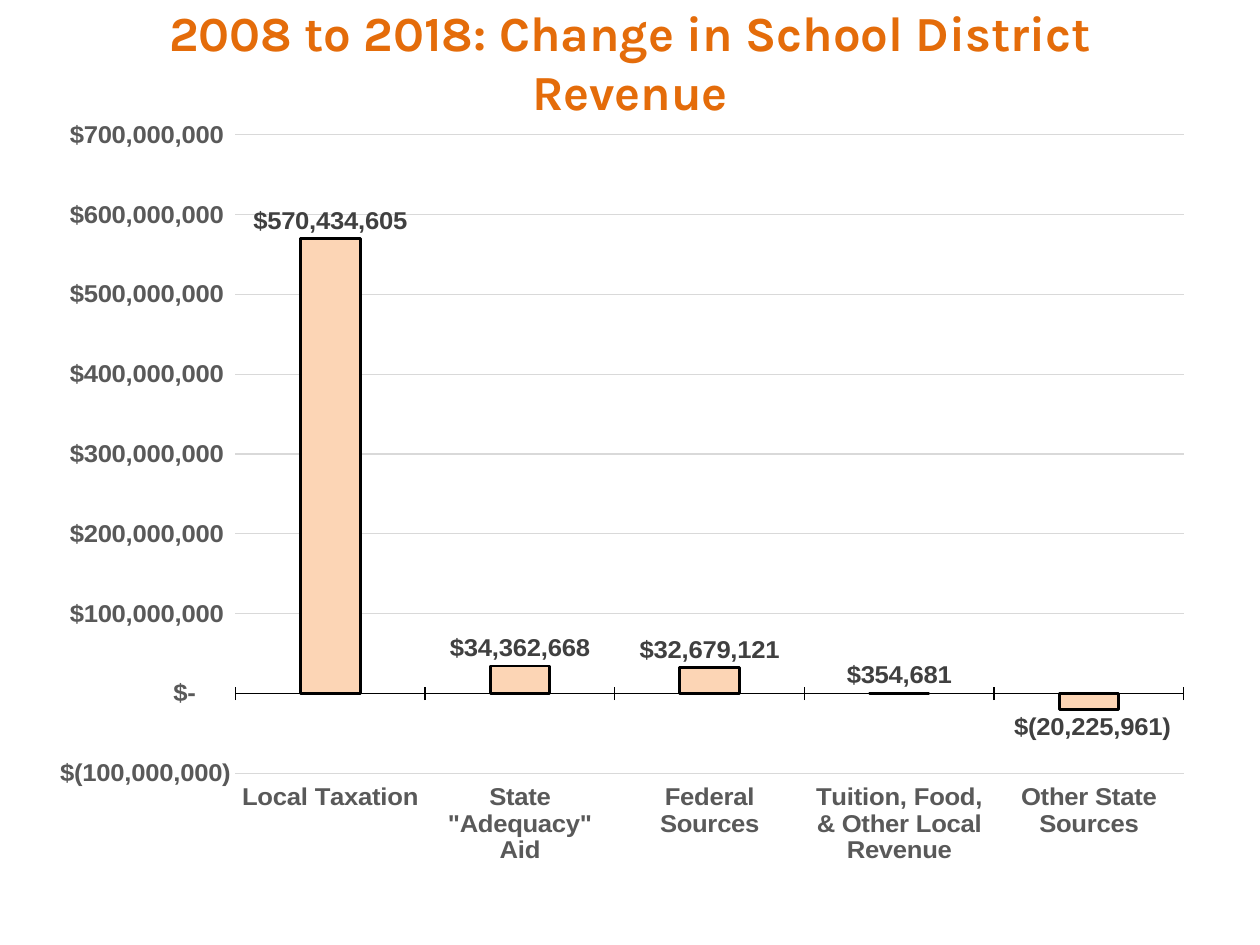
from pptx import Presentation
from pptx.chart.data import CategoryChartData
from pptx.dml.color import RGBColor
from pptx.enum.chart import XL_CHART_TYPE, XL_LABEL_POSITION, XL_TICK_LABEL_POSITION, XL_TICK_MARK
from pptx.enum.text import MSO_ANCHOR, PP_ALIGN
from pptx.oxml import parse_xml
from pptx.oxml.ns import nsdecls
from pptx.util import Cm, Pt

COLUMN = XL_CHART_TYPE.COLUMN_CLUSTERED
OUTSIDE_END = XL_LABEL_POSITION.OUTSIDE_END
LOW = XL_TICK_LABEL_POSITION.LOW
CROSS, NO_TICK = XL_TICK_MARK.CROSS, XL_TICK_MARK.NONE
MIDDLE, CENTER = MSO_ANCHOR.MIDDLE, PP_ALIGN.CENTER

DOLLARS = '_("$"* #,##0_);_("$"* \\(#,##0\\);_("$"* "-"??_);_(@_)'
REVENUE_CHANGE = {
    "Local Taxation": 570434605,
    'State "Adequacy" Aid': 34362668,
    "Federal Sources": 32679121,
    "Tuition, Food, & Other Local Revenue": 354681,
    "Other State Sources": -20225961,
}
PLOT_BOX = {"x": 0.12, "y": 0.03, "w": 0.85, "h": 0.94}
CHART_TEXT = 15.3


def rgb(value):
    return RGBColor.from_string(value)


def set_font(font, size, color, name="Arial", bold=True):
    font.name, font.size, font.bold = name, Pt(size), bold
    font.color.rgb = rgb(color)


def set_line(line, color, width):
    line.color.rgb = rgb(color)
    line.width = Pt(width)


def set_plot_box(chart, box):
    """Fix the inner plot area, in fractions of the chart."""
    plot_area = chart._chartSpace.chart.plotArea
    for old in plot_area.xpath("c:layout"):
        plot_area.remove(old)
    modes = "".join(f'<c:{k}Mode val="edge"/>' for k in "xy")
    sizes = "".join(f'<c:{k} val="{v}"/>' for k, v in box.items())
    plot_area.insert(0, parse_xml(
        f'<c:layout {nsdecls("c")}><c:manualLayout><c:layoutTarget val="inner"/>'
        f"{modes}{sizes}</c:manualLayout></c:layout>"))


def add_title(s, left, top, width, height):
    sp = s.shapes.add_textbox(left, top, width, height)
    tf = sp.text_frame
    tf.word_wrap = True
    tf.vertical_anchor = MIDDLE
    tf.margin_left = tf.margin_right = tf.margin_top = tf.margin_bottom = Cm(0.13)
    p = tf.paragraphs[0]
    p.alignment = CENTER
    r = p.add_run()
    r.text = "2008 to 2018: Change in School District Revenue"
    set_font(r.font, 28, "E46C0A", "Karla")


def style_axes(chart):
    categories, values = chart.category_axis, chart.value_axis
    for axis in (categories, values):
        set_font(axis.tick_labels.font, CHART_TEXT, "595959")
        axis.minor_tick_mark = NO_TICK
    categories.tick_label_position = LOW
    categories.major_tick_mark = CROSS
    set_line(categories.format.line, "000000", 0.75)

    values.minimum_scale, values.maximum_scale = -100000000, 700000000
    values.major_unit = 100000000
    values.major_tick_mark = NO_TICK
    values.format.line.fill.background()
    set_line(values.major_gridlines.format.line, "D9D9D9", 0.75)
    values.tick_labels.number_format = DOLLARS
    values.tick_labels.number_format_is_linked = False


def style_columns(plot):
    plot.gap_width, plot.overlap = 219, -27
    plot.vary_by_categories = False
    series = plot.series[0]
    series.invert_if_negative = False
    series.format.fill.solid()
    series.format.fill.fore_color.rgb = rgb("FCD5B5")
    set_line(series.format.line, "000000", 1.75)
    labels = series.data_labels
    labels.show_value = True
    labels.position = OUTSIDE_END
    labels.number_format = DOLLARS
    labels.number_format_is_linked = False
    set_font(labels.font, CHART_TEXT, "404040")


def add_revenue_chart(s, left, top, width, height):
    data = CategoryChartData()
    data.categories = list(REVENUE_CHANGE)
    data.add_series("Series 1", list(REVENUE_CHANGE.values()))
    chart = s.shapes.add_chart(COLUMN, left, top, width, height, data).chart
    chart.has_legend = chart.has_title = False
    set_font(chart.font, CHART_TEXT, "000000", bold=False)
    set_plot_box(chart, PLOT_BOX)
    style_axes(chart)
    style_columns(chart.plots[0])


def main():
    prs = Presentation()
    prs.slide_width, prs.slide_height = Cm(25.4), Cm(19.05)
    s = prs.slides.add_slide(prs.slide_layouts[6])
    add_title(s, Cm(1.75), Cm(0.49), Cm(21.9), Cm(1.5))
    add_revenue_chart(s, Cm(1.07), Cm(2.31), Cm(23.47), Cm(15.09))
    prs.save("out.pptx")


if __name__ == "__main__":
    main()
